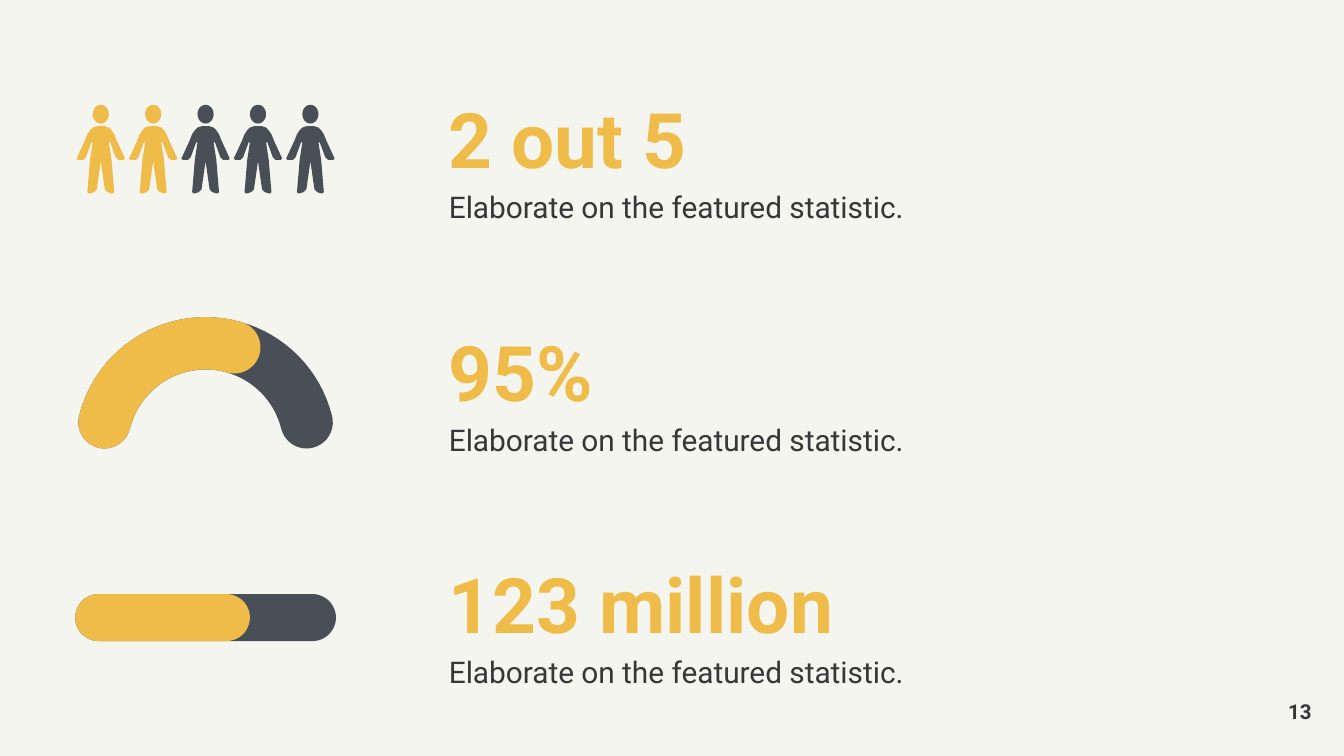
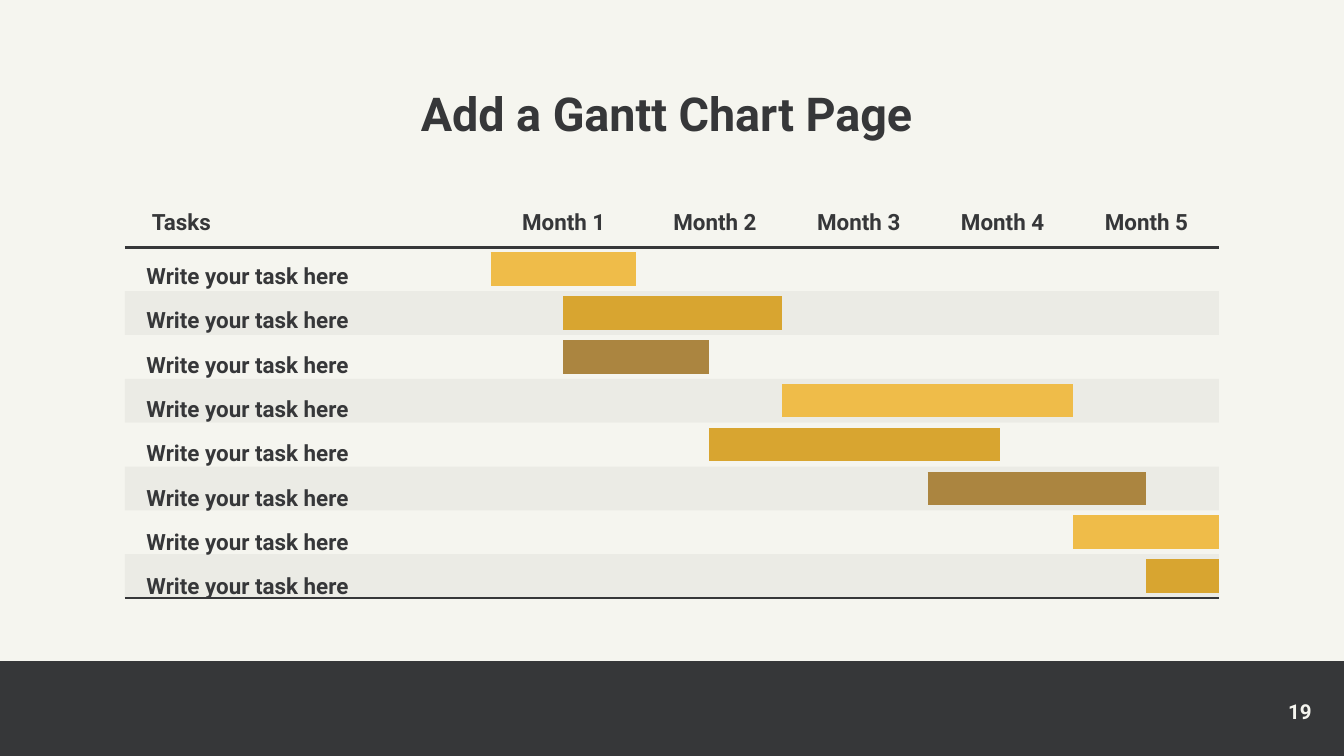
from math import cos, pi, radians, sin

from lxml import etree
from pptx import Presentation
from pptx.dml.color import RGBColor
from pptx.enum.shapes import MSO_CONNECTOR, MSO_SHAPE
from pptx.enum.text import MSO_ANCHOR, MSO_AUTO_SIZE, PP_ALIGN
from pptx.oxml.ns import qn
from pptx.util import Inches, Pt

LEFT, CENTER, RIGHT, JUSTIFY = PP_ALIGN.LEFT, PP_ALIGN.CENTER, PP_ALIGN.RIGHT, PP_ALIGN.JUSTIFY
TOP, MIDDLE = MSO_ANCHOR.TOP, MSO_ANCHOR.MIDDLE
NO_AUTOFIT = MSO_AUTO_SIZE.NONE
RECTANGLE, ROUNDED = MSO_SHAPE.RECTANGLE, MSO_SHAPE.ROUNDED_RECTANGLE
STRAIGHT = MSO_CONNECTOR.STRAIGHT

SLIDE_WIDTH = 10
SLIDE_HEIGHT = SLIDE_WIDTH * 9 / 16
FONT = "Roboto"
COLORS = {
    "paper": "F5F5EF",
    "ink": "363739",
    "slate": "494F56",
    "gold": "EFBC49",
    "amber": "D8A530",
    "bronze": "AB8540",
}
RGB = {name: RGBColor.from_string(value) for name, value in COLORS.items()}


def write(shape, box, text, size, color="ink", align=LEFT, spacing=1.4, bold=True, anchor=TOP):
    shape.left, shape.top, shape.width, shape.height = map(Inches, box)
    frame = shape.text_frame
    frame.auto_size = NO_AUTOFIT
    frame.word_wrap = True
    frame.vertical_anchor = anchor
    frame.margin_left = frame.margin_top = frame.margin_right = frame.margin_bottom = 0
    frame.text = text
    paragraph = frame.paragraphs[0]
    paragraph.alignment = align
    paragraph.line_spacing = spacing
    paragraph.font.name = FONT
    paragraph.font.size = Pt(size)
    paragraph.font.bold = bold
    paragraph.font.color.rgb = RGB[color]


def draw_line(slide, start, end, y, color, width):
    line = slide.shapes.add_connector(STRAIGHT, Inches(start), Inches(y), Inches(end), Inches(y))
    line.line.color.rgb = RGB[color]
    line.line.width = Pt(width)
    etree.SubElement(line._element.spPr, qn("a:effectLst"))


prs = Presentation()
prs.slide_width, prs.slide_height = Inches(SLIDE_WIDTH), Inches(SLIDE_HEIGHT)
background = prs.slide_master.background.fill
background.solid()
background.fore_color.rgb = RGB["paper"]
title_only, blank = prs.slide_layouts[5], prs.slide_layouts[6]

stats = prs.slides.add_slide(blank)
for row, figure in enumerate(["2 out 5", "95%", "123 million"]):
    top = 0.55 + 1.73 * row
    write(stats.shapes.add_textbox(0, 0, 0, 0), (3.34, top, 4.97, 0.69),
          figure, 41, "gold", spacing=1.2)
    write(stats.shapes.add_textbox(0, 0, 0, 0), (3.34, top + 0.75, 4.97, 0.27),
          "Elaborate on the featured statistic.", 16, bold=False)

outlines = []

GAUGE_X, GAUGE_Y = 1.53, 3.33
outer, inner = 0.97, 0.58
middle, cap_radius = (outer + inner) / 2, (outer - inner) / 2
start_angle = 166
for color, end_angle in [("slate", 14), ("gold", 74)]:
    sweep = [radians(start_angle + (end_angle - start_angle) * i / 40) for i in range(41)]
    gauge = [(GAUGE_X + outer * cos(a), GAUGE_Y - outer * sin(a)) for a in sweep]
    for angle, turn in [(end_angle, 0), (start_angle, 180)]:
        cap_x = GAUGE_X + middle * cos(radians(angle))
        cap_y = GAUGE_Y - middle * sin(radians(angle))
        cap = [radians(angle + turn - 180 * i / 20) for i in range(21)]
        gauge += [(cap_x + cap_radius * cos(a), cap_y - cap_radius * sin(a)) for a in cap]
        if turn == 0:
            gauge += [(GAUGE_X + inner * cos(a), GAUGE_Y - inner * sin(a)) for a in reversed(sweep)]
    outlines.append((color, [gauge]))

head = [(0.06 * cos(pi * i / 12), 0.85 + 0.07 * sin(pi * i / 12)) for i in range(24)]
right_half = [
    (0.03, 0.94), (0.06, 0.95), (0.08, 0.97), (0.1, 1), (0.12, 1.05), (0.18, 1.18),
    (0.17, 1.19), (0.15, 1.19), (0.13, 1.19), (0.11, 1.17), (0.07, 1.06), (0.06, 1.06),
    (0.08, 1.19), (0.1, 1.43), (0.09, 1.44), (0.08, 1.44), (0.05, 1.43), (0.03, 1.41), (0, 1.2),
]
body = right_half + [(-x, y) for x, y in reversed(right_half[:-1])]
for color, people in [("gold", range(2)), ("slate", range(2, 5))]:
    outlines.append((color, [
        [(0.75 + 0.39 * person + x, y) for x, y in part]
        for person in people for part in (head, body)
    ]))

for color, contours in outlines:
    first_x, first_y = contours[0][0]
    builder = stats.shapes.build_freeform(Inches(first_x), Inches(first_y))
    for number, contour in enumerate(contours):
        points = [(Inches(x), Inches(y)) for x, y in contour]
        if number:
            builder.move_to(*points[0])
        builder.add_line_segments(points[1:], close=True)
    icon = builder.convert_to_shape()
    icon.shadow.inherit = False
    icon.fill.solid()
    icon.fill.fore_color.rgb = RGB[color]
    icon.line.fill.background()

for color, width in [("slate", 1.94), ("gold", 1.3)]:
    progress = stats.shapes.add_shape(ROUNDED, Inches(0.56), Inches(4.42), Inches(width), Inches(0.35))
    progress.adjustments[0] = 0.5
    progress.shadow.inherit = False
    progress.fill.solid()
    progress.fill.fore_color.rgb = RGB[color]
    progress.line.fill.background()

gantt = prs.slides.add_slide(title_only)
write(gantt.shapes.title, (0.93, 0.55, 8.06, 0.42), "Add a Gantt Chart Page", 25,
      align=CENTER, spacing=1.2)

GRID_LEFT, GRID_RIGHT, GRID_TOP, GRID_BOTTOM = 0.93, 9.07, 1.84, 4.45
TIMELINE_LEFT = 3.65
FOOTER_TOP = 4.92
month_width = (GRID_RIGHT - TIMELINE_LEFT) / 5
row_height = (GRID_BOTTOM - GRID_TOP) / 8

bands = [(0, FOOTER_TOP, SLIDE_WIDTH, SLIDE_HEIGHT - FOOTER_TOP, None)]
bands += [(GRID_LEFT, GRID_TOP + row_height * row, GRID_RIGHT - GRID_LEFT, row_height, 5)
          for row in range(1, 8, 2)]
for left, top, width, height, opacity in bands:
    band = gantt.shapes.add_shape(RECTANGLE, Inches(left), Inches(top), Inches(width), Inches(height))
    band.shadow.inherit = False
    band.fill.solid()
    band.fill.fore_color.rgb = RGB["ink"]
    band.line.fill.background()
    if opacity:
        tint = band._element.spPr.find(qn("a:solidFill"))[0]
        etree.SubElement(tint, qn("a:alpha"), val=str(opacity * 1000))

for y in (GRID_TOP, GRID_BOTTOM):
    draw_line(gantt, GRID_LEFT, GRID_RIGHT, y, "ink", 1.5)

write(gantt.shapes.add_textbox(0, 0, 0, 0), (1.13, 1.47, 2.39, 0.2), "Tasks", 12, align=JUSTIFY)
month_boxes = [(3.78, 0.83)] + [(4.96 + 1.07 * i, 0.72) for i in range(4)]
for month, (left, width) in enumerate(month_boxes, 1):
    write(gantt.shapes.add_textbox(0, 0, 0, 0), (left, 1.47, width, 0.2),
          f"Month {month}", 12, align=CENTER)

schedule = [
    (0, 1, "gold"), (0.5, 2, "amber"), (0.5, 1.5, "bronze"), (2, 4, "gold"),
    (1.5, 3.5, "amber"), (3, 4.5, "bronze"), (4, 5, "gold"), (4.5, 5, "amber"),
]
for row, (start, end, color) in enumerate(schedule):
    write(gantt.shapes.add_textbox(0, 0, 0, 0), (1.09, 1.87 + 0.33 * row, 2.43, 0.2),
          "Write your task here", 12, align=JUSTIFY)
    draw_line(gantt, TIMELINE_LEFT + month_width * start, TIMELINE_LEFT + month_width * end,
              GRID_TOP + row_height * (row + 0.5), color, 18)

for slide, number, color in [(stats, "13", "ink"), (gantt, "19", "paper")]:
    write(slide.shapes.add_textbox(0, 0, 0, 0), (9.16, 5.19, 0.6, 0.2), number, 11, color,
          align=RIGHT, spacing=1, anchor=MIDDLE)

prs.save("out.pptx")
